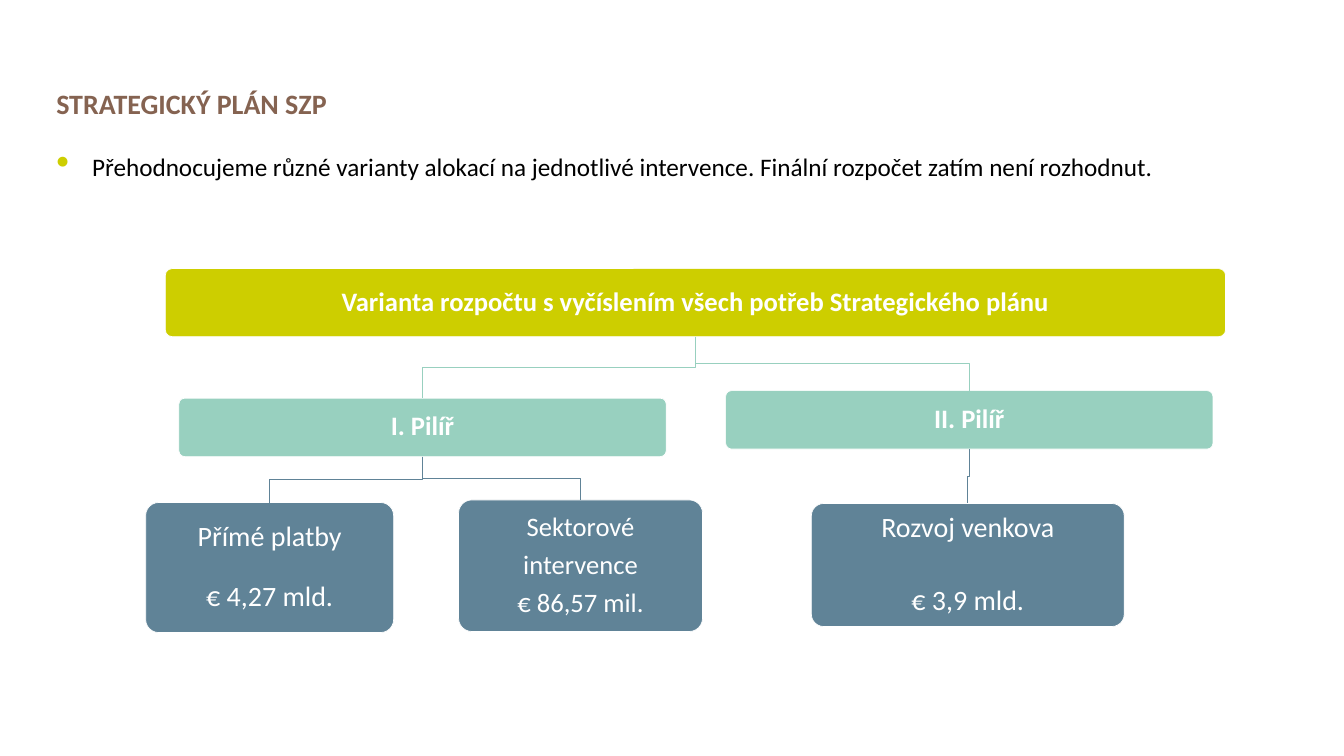
from pptx import Presentation
from pptx.dml.color import RGBColor
from pptx.enum.shapes import MSO_SHAPE
from pptx.enum.text import MSO_ANCHOR, PP_ALIGN
from pptx.oxml import parse_xml
from pptx.oxml.ns import nsdecls
from pptx.util import Inches, Pt

# Content
HUE = {"lime": "CDCE00", "mint": "98D0BF", "slate": "608397",
       "brown": "856351", "black": "000000", "white": "FFFFFF"}
WIDE, HIGH = Inches(26.67), Inches(15)
TITLE = "STRATEGICKÝ PLÁN SZP"
NOTE = ("Přehodnocujeme různé varianty alokací na jednotlivé intervence. "
        "Finální rozpočet zatím není rozhodnut.")
HEAD = (3.82, 11.67, 94.68, 20.53)

# Nodes: parent, place in percent of the slide, hue, size, bold, gap, lines
NODES = {
    "root": (None, (12.3, 35.53, 78.89, 9), "lime", 38, True, 0,
             ["Varianta rozpočtu s vyčíslením všech potřeb Strategického plánu"]),
    "first": ("root", (13.31, 52.67, 36.26, 7.73), "mint", 38, True, 0,
              ["I. Pilíř"]),
    "second": ("root", (53.99, 51.67, 36.26, 7.73), "mint", 38, True, 0,
               ["II. Pilíř"]),
    "direct": ("first", (10.84, 66.47, 18.45, 17.2), "slate", 40, False, 43,
               ["Přímé platby", "€ 4,27 mld."]),
    "sector": ("first", (34.12, 66.13, 18.15, 17.4), "slate", 38, False, 13,
               ["Sektorové", "intervence", "€ 86,57 mil."]),
    "rural": ("second", (60.37, 66.6, 23.28, 16.27), "slate", 40, False, 60,
              ["Rozvoj venkova", "€ 3,9 mld."]),
}


def tint(hue):
    return RGBColor.from_string(HUE[hue])


def place(box):
    return [round(part * side / 100)
            for part, side in zip(box, (WIDE, HIGH, WIDE, HIGH))]


def style(item, looks):
    for name, value in looks.items():
        setattr(item, name, value)


def write(para, text, size, hue, bold, looks):
    style(para, {"line_spacing": 0.9, **looks})
    run = para.add_run()
    run.text = text
    style(run.font, {"name": "Calibri", "size": Pt(size), "bold": bold})
    run.font.color.rgb = tint(hue)


def edge(shape, hue):
    shape.shadow.inherit = False
    shape.line.color.rgb = tint(hue)
    shape.line.width = Pt(1)


def link(top, low, hue):
    x, y = top.left + top.width // 2, top.top + top.height
    end, stop = low.left + low.width // 2, low.top
    mid = (y + stop) // 2
    form = slide.shapes.build_freeform(x, y)
    form.add_line_segments([(x, mid), (end, mid), (end, stop)], close=False)
    line = form.convert_to_shape()
    line.fill.background()
    edge(line, hue)


deck = Presentation()
style(deck, {"slide_width": WIDE, "slide_height": HIGH})
slide = deck.slides.add_slide(deck.slide_layouts[6])

# Heading and bullet
frame = slide.shapes.add_textbox(*place(HEAD)).text_frame
frame.word_wrap = True
flow = {"alignment": PP_ALIGN.JUSTIFY, "space_after": Pt(48)}
write(frame.paragraphs[0], TITLE, 40, "brown", True, flow)
para = frame.add_paragraph()
props = para._p.get_or_add_pPr()
props.set("marL", str(Inches(0.71)))
props.set("indent", str(-Inches(0.71)))
for mark in (f'<a:buClr {nsdecls("a")}><a:srgbClr val="{HUE["lime"]}"/></a:buClr>',
             f'<a:buSzPct {nsdecls("a")} val="150000"/>',
             f'<a:buChar {nsdecls("a")} char="•"/>'):
    props.append(parse_xml(mark))
write(para, NOTE, 36, "black", False, flow)

# Tree: boxes joined to their parents
made = {}
for name, (up, box, hue, size, bold, gap, lines) in NODES.items():
    shape = slide.shapes.add_shape(MSO_SHAPE.ROUNDED_RECTANGLE, *place(box))
    shape.adjustments[0] = 0.1
    shape.fill.solid()
    shape.fill.fore_color.rgb = tint(hue)
    edge(shape, "white")
    frame = shape.text_frame
    pad = Inches(0.2)
    style(frame, {"word_wrap": True, "vertical_anchor": MSO_ANCHOR.MIDDLE,
                  "margin_left": pad, "margin_right": pad,
                  "margin_top": pad, "margin_bottom": pad})
    for row, text in enumerate(lines):
        para = frame.add_paragraph() if row else frame.paragraphs[0]
        write(para, text, size, "white", bold,
              {"alignment": PP_ALIGN.CENTER, "space_before": Pt(gap if row else 0)})
    made[name] = shape
    if up:
        link(made[up], shape, hue)

deck.save("out.pptx")
